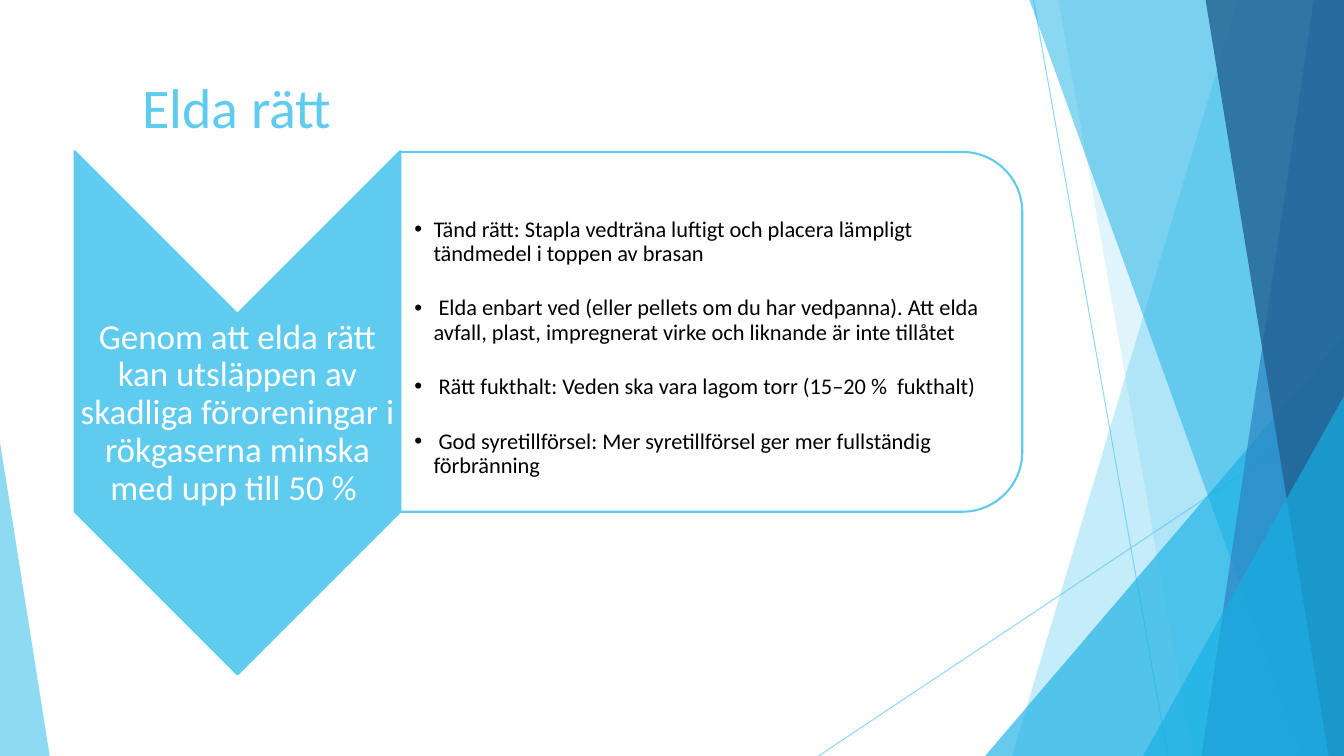
from lxml.etree import SubElement
from pptx import Presentation
from pptx.dml.color import RGBColor
from pptx.enum.shapes import MSO_CONNECTOR as CONN, MSO_SHAPE as SHAPE
from pptx.enum.text import MSO_ANCHOR as ANCHOR, MSO_AUTO_SIZE as AUTO, PP_ALIGN as ALIGN
from pptx.oxml.ns import qn
from pptx.util import Inches, Pt

SKY = RGBColor(0x5F, 0xCB, 0xEF)
CYAN = RGBColor(0x17, 0xB0, 0xE4)
BLUE = RGBColor(0x2E, 0x83, 0xC3)
NAVY = RGBColor(0x22, 0x62, 0x92)
WHITE = RGBColor(0xFF, 0xFF, 0xFF)
BLACK = RGBColor(0x00, 0x00, 0x00)

TIPS = [
    "Tänd rätt: Stapla vedträna luftigt och placera lämpligt tändmedel i toppen av brasan",
    " Elda enbart ved (eller pellets om du har vedpanna). Att elda avfall, plast, "
    "impregnerat virke och liknande är inte tillåtet",
    " Rätt fukthalt: Veden ska vara lagom torr (15–20 %  fukthalt)",
    " God syretillförsel: Mer syretillförsel ger mer fullständig förbränning",
]


class Deck:
    """Draws one slide, with every length given in percent of the slide's size."""

    font = "Calibri"

    def __init__(self):
        self.prs = Presentation()
        self.prs.slide_width, self.prs.slide_height = Inches(13.33), Inches(7.5)
        self.slide = self.prs.slides.add_slide(self.prs.slide_layouts[1])
        self.shapes = self.slide.shapes

    def x(self, share):
        return round(self.prs.slide_width * share / 100)

    def y(self, share):
        return round(self.prs.slide_height * share / 100)

    def box(self, left, top, width, height):
        return self.x(left), self.y(top), self.x(width), self.y(height)

    def fade(self, fill, alpha):
        color = fill._xPr.find(".//" + qn("a:srgbClr"))
        SubElement(color, qn("a:alpha")).set("val", str(alpha * 1000))

    def paint(self, sp, color, alpha=100, edge=None):
        sp.shadow.inherit = False
        sp.fill.solid()
        sp.fill.fore_color.rgb = color
        self.fade(sp.fill, alpha)
        if edge is None:
            sp.line.fill.background()
        else:
            sp.line.color.rgb = edge
            sp.line.width = Pt(1.5)

    def ray(self, x1, y1, x2, y2):
        line = self.shapes.add_connector(
            CONN.STRAIGHT, self.x(x1), self.y(y1), self.x(x2), self.y(y2))
        line.line.color.rgb = SKY
        line.line.width = Pt(0.75)
        self.fade(line.line.fill, 70)
        SubElement(line._element.spPr, qn("a:effectLst"))

    def facet(self, top, bottom, color, alpha):
        fb = self.shapes.build_freeform(self.x(top), 0)
        fb.add_line_segments([(self.x(px), self.y(py))
                              for px, py in ((100, 0), (100, 100), (bottom, 100))])
        self.paint(fb.convert_to_shape(), color, alpha)

    def wedge(self, left, top, width, apex, color, alpha):
        sp = self.shapes.add_shape(
            SHAPE.ISOSCELES_TRIANGLE, *self.box(left, top, width, 100 - top))
        sp.adjustments[0] = apex
        self.paint(sp, color, alpha)

    def turned(self, kind, box, color, alpha=100):
        left, top, width, height = self.box(*box)
        shift = (width - height) // 2
        sp = self.shapes.add_shape(kind, left + shift, top - shift, height, width)
        sp.rotation = 90
        self.paint(sp, color, alpha, SKY)

    def style(self, tf, size, color, align, anchor, insets):
        tf.word_wrap = True
        tf.auto_size = AUTO.NONE
        tf.vertical_anchor = anchor
        (tf.margin_left, tf.margin_top,
         tf.margin_right, tf.margin_bottom) = map(Inches, insets)
        for p in tf.paragraphs:
            p.alignment = align
            for r in p.runs:
                r.font.name, r.font.size = self.font, Pt(size)
                r.font.color.rgb = color

    def place(self, sp, box):
        sp.left, sp.top, sp.width, sp.height = self.box(*box)
        self.shapes._spTree.append(sp._element)

    def title(self, text, box):
        sp = self.shapes.title
        self.place(sp, box)
        sp.text_frame.text = text
        self.style(sp.text_frame, 40, SKY, ALIGN.LEFT, ANCHOR.TOP, (0.1, 0.05, 0.1, 0.05))

    def label(self, text, box):
        tf = self.shapes.add_textbox(*self.box(*box)).text_frame
        tf.text = text
        tf.paragraphs[0].line_spacing = 0.9
        self.style(tf, 25, WHITE, ALIGN.CENTER, ANCHOR.MIDDLE, (0.02,) * 4)

    def bullets(self, items, box):
        sp = self.slide.placeholders[1]
        self.place(sp, box)
        tf = sp.text_frame
        tf.text = "\n".join(items)
        for i, p in enumerate(tf.paragraphs):
            p.line_spacing = 0.9
            p.space_before = Pt(21.7 if i else 0)
            pPr = p._p.get_or_add_pPr()
            pPr.set("marL", str(Inches(0.19)))
            pPr.set("indent", str(-Inches(0.19)))
            SubElement(pPr, qn("a:buChar")).set("char", "•")
        self.style(tf, 16, BLACK, ALIGN.LEFT, ANCHOR.MIDDLE, (0.14, 0.01, 0.01, 0.01))


def main():
    s = Deck()
    s.ray(76.9, 0, 86.9, 100)
    s.ray(100, 53.7, 60.9, 100)
    s.facet(92.1, 75.3, SKY, 36)
    s.facet(78.75, 88.75, SKY, 20)
    s.wedge(73.3, 44.4, 26.7, 1, CYAN, 66)
    s.facet(76.6, 96.85, CYAN, 50)
    s.facet(97.75, 89.4, BLUE, 70)
    s.facet(89.7, 98.85, NAVY, 80)
    s.wedge(85.05, 52.4, 14.95, 1, CYAN, 66)
    s.wedge(0, 58.5, 3.7, 0, SKY, 70)

    s.title("Elda rätt", (9.83, 8.93, 17.93, 19.2))
    s.turned(SHAPE.CHEVRON, (5.55, 20, 24.23, 69.2), SKY)
    s.label("Genom att elda rätt kan utsläppen av skadliga föroreningar i "
            "rökgaserna minska med upp till 50 % ", (5.55, 41.6, 24.23, 26.13))
    s.turned(SHAPE.ROUND_2_SAME_RECTANGLE, (29.78, 20.1, 46.28, 47.6), WHITE, 90)
    s.bullets(TIPS, (29.78, 26.8, 45, 38.5))
    s.prs.save("out.pptx")


if __name__ == "__main__":
    main()
